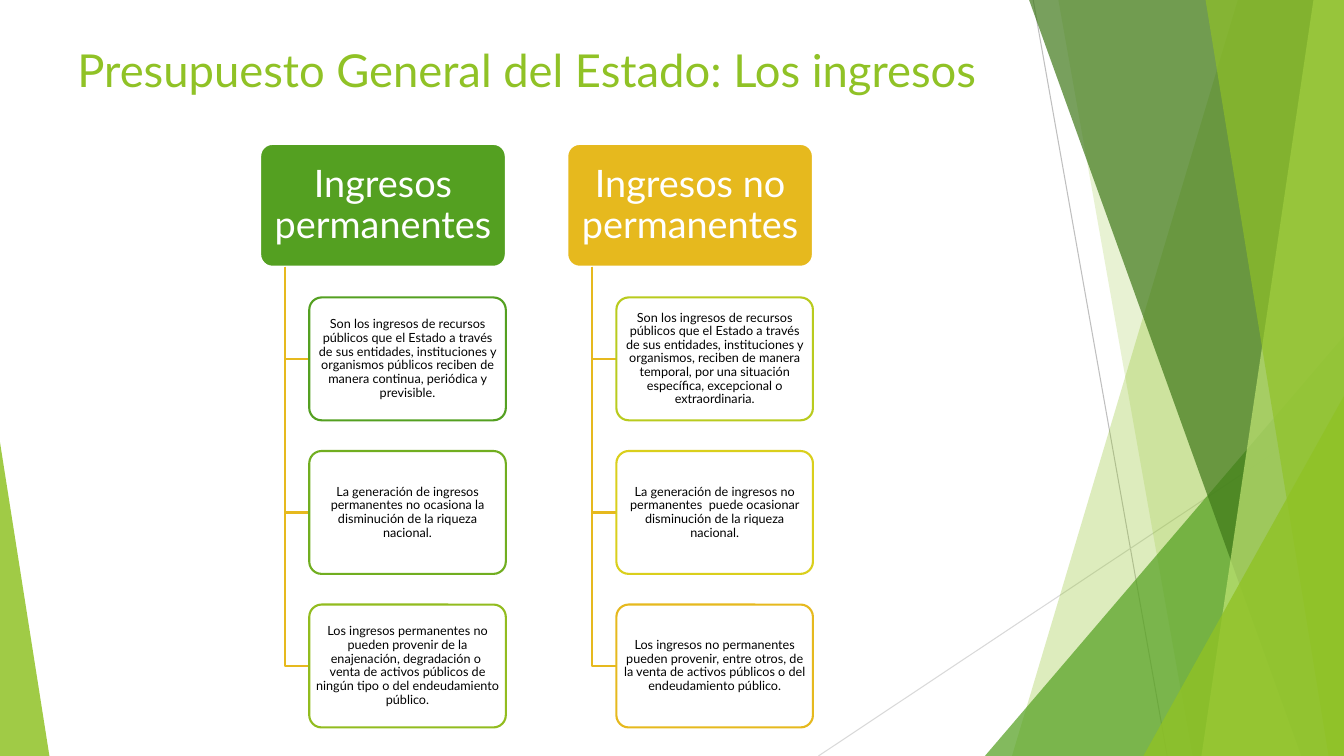
from lxml.etree import SubElement
from pptx import Presentation
from pptx.dml.color import RGBColor
from pptx.enum.shapes import MSO_CONNECTOR as Connector, MSO_SHAPE as Shape
from pptx.enum.text import MSO_ANCHOR as Anchor, PP_ALIGN as Align
from pptx.oxml.ns import qn
from pptx.util import Pt

TITLE = "Presupuesto General del Estado: Los ingresos"
# Each branch: heading, heading colour, then (detail, outline colour) pairs
BRANCHES = [
    ("Ingresos permanentes", "54A021", [
        ("Son los ingresos de recursos públicos que el Estado a través de sus "
         "entidades, instituciones y organismos públicos reciben de manera "
         "continua, periódica y previsible.", "54A021"),
        ("La generación de ingresos permanentes no ocasiona la disminución de "
         "la riqueza nacional.", "71AE20"),
        ("Los ingresos permanentes no pueden provenir de la enajenación, "
         "degradación o  venta de activos públicos de ningún tipo o del "
         "endeudamiento público.", "92BC1F"),
    ]),
    ("Ingresos no permanentes", "E6B91E", [
        ("Son los ingresos de recursos públicos que el Estado a través de sus "
         "entidades, instituciones y organismos, reciben de manera temporal, "
         "por una situación específica, excepcional o extraordinaria.", "B9CB1E"),
        ("La generación de ingresos no permanentes  puede ocasionar "
         "disminución de la riqueza nacional.", "DACF1C"),
        ("Los ingresos no permanentes pueden provenir, entre otros, de la "
         "venta de activos públicos o del endeudamiento público.", "E6B91E"),
    ]),
]

THEME = {
    "font": "Lato", "title_size": 32.4, "heading_size": 27, "detail_size": 9,
    "title": "90C226", "on_heading": "FFFFFF", "on_detail": "000000",
    "paper": "FFFFFF", "branch_line": "E6B91E", "line_width": 1.5,
}

SLIDE_W, SLIDE_H = 960, 540
# Thin rays: start, end, colour
RAYS = [((738, 0), (833.75, 540), "BFBFBF"), ((960, 290.2), (584.6, 540), "D9D9D9")]
# Bands reach the right edge: x at the top, x at the bottom.
# Wedges stand on the bottom edge: left, width, height, apex position (0 to 1).
FACETS = [
    ("band", (884.2, 722.9), "90C226", 30),
    ("band", (756, 851.8), "90C226", 20),
    ("wedge", (703.5, 256.5, 300, 1), "54A021", 72),
    ("band", (735.1, 929.5), "3F7819", 70),
    ("band", (938.2, 858.2), "C0E474", 70),
    ("band", (861.1, 949), "90C226", 65),
    ("wedge", (816.7, 143.3, 257.2, 1), "90C226", 80),
    ("wedge", (0, 35.3, 224, 0), "90C226", 85),
]

TREE_LEFT, TREE_TOP = 185.8, 102.8
CARD_W, CARD_H = 175.5, 87.75
COLUMN_STEP, ROW_STEP = CARD_W * 1.25, CARD_H * 1.25
TRUNK_INDENT, DETAIL_INDENT = CARD_W * 0.1, CARD_W * 0.2


def paint(shape, color, alpha=100):
    shape.shadow.inherit = False
    shape.fill.solid()
    shape.fill.fore_color.rgb = RGBColor.from_string(color)
    if alpha < 100:
        color_node = shape.fill._xPr.find(qn("a:solidFill"))[0]
        SubElement(color_node, qn("a:alpha"), val=str(alpha * 1000))


def outline(shape, color, width=THEME["line_width"]):
    shape.line.color.rgb = RGBColor.from_string(color)
    shape.line.width = Pt(width)


def trace(shapes, points, close):
    corners = [(Pt(x), Pt(y)) for x, y in points]
    builder = shapes.build_freeform(*corners[0])
    builder.add_line_segments(corners[1:], close=close)
    return builder.convert_to_shape()


def write(shape, text, size, color, align, anchor, margins):
    frame = shape.text_frame
    frame.word_wrap = True
    frame.vertical_anchor = anchor
    frame.margin_left = frame.margin_right = Pt(margins[0])
    frame.margin_top = frame.margin_bottom = Pt(margins[1])
    paragraph = frame.paragraphs[0]
    paragraph.alignment = align
    run = paragraph.add_run()
    run.text = text
    run.font.name = THEME["font"]
    run.font.size = Pt(size)
    run.font.color.rgb = RGBColor.from_string(color)
    return paragraph


def add_backdrop(shapes):
    for start, end, color in RAYS:
        ray = shapes.add_connector(Connector.STRAIGHT, *map(Pt, start + end))
        outline(ray, color, 0.75)
        SubElement(ray._element.spPr, qn("a:effectLst"))
    for kind, measures, color, alpha in FACETS:
        if kind == "band":
            top_x, bottom_x = measures
            facet = trace(shapes, [(top_x, 0), (SLIDE_W, 0), (SLIDE_W, SLIDE_H),
                                   (bottom_x, SLIDE_H)], close=True)
        else:
            left, width, height, apex = measures
            facet = shapes.add_shape(Shape.ISOSCELES_TRIANGLE, Pt(left),
                                     Pt(SLIDE_H - height), Pt(width), Pt(height))
            facet.adjustments[0] = apex
        paint(facet, color, alpha)
        facet.line.fill.background()


def add_card(shapes, left, top, width, text, size, text_color, fill, alpha, edge, margins):
    card = shapes.add_shape(Shape.ROUNDED_RECTANGLE, Pt(left), Pt(top),
                            Pt(width), Pt(CARD_H))
    card.adjustments[0] = 0.1
    paint(card, fill, alpha)
    outline(card, edge)
    paragraph = write(card, text, size, text_color, Align.CENTER, Anchor.MIDDLE, margins)
    paragraph.line_spacing = 0.9


def add_branch(shapes, left, heading, color, details):
    add_card(shapes, left, TREE_TOP, CARD_W, heading, THEME["heading_size"],
             THEME["on_heading"], color, 100, THEME["paper"], (4.05, 2.7))
    trunk_x, detail_x = left + TRUNK_INDENT, left + DETAIL_INDENT
    for row, (detail, edge) in enumerate(details, start=1):
        top = TREE_TOP + row * ROW_STEP
        middle = top + CARD_H / 2
        elbow = trace(shapes, [(trunk_x, TREE_TOP + CARD_H), (trunk_x, middle),
                               (detail_x, middle)], close=False)
        elbow.shadow.inherit = False
        elbow.fill.background()
        outline(elbow, THEME["branch_line"])
        add_card(shapes, detail_x, top, CARD_W - DETAIL_INDENT, detail,
                 THEME["detail_size"], THEME["on_detail"], THEME["paper"], 90,
                 edge, (1.35, 0.9))


def main():
    deck = Presentation()
    deck.slide_width, deck.slide_height = Pt(SLIDE_W), Pt(SLIDE_H)
    shapes = deck.slides.add_slide(deck.slide_layouts[6]).shapes
    add_backdrop(shapes)
    title = shapes.add_textbox(Pt(48.2), Pt(26.6), Pt(678.2), Pt(85))
    write(title, TITLE, THEME["title_size"], THEME["title"], Align.LEFT,
          Anchor.TOP, (7.2, 3.6))
    for column, branch in enumerate(BRANCHES):
        add_branch(shapes, TREE_LEFT + column * COLUMN_STEP, *branch)
    deck.save("out.pptx")


if __name__ == "__main__":
    main()
